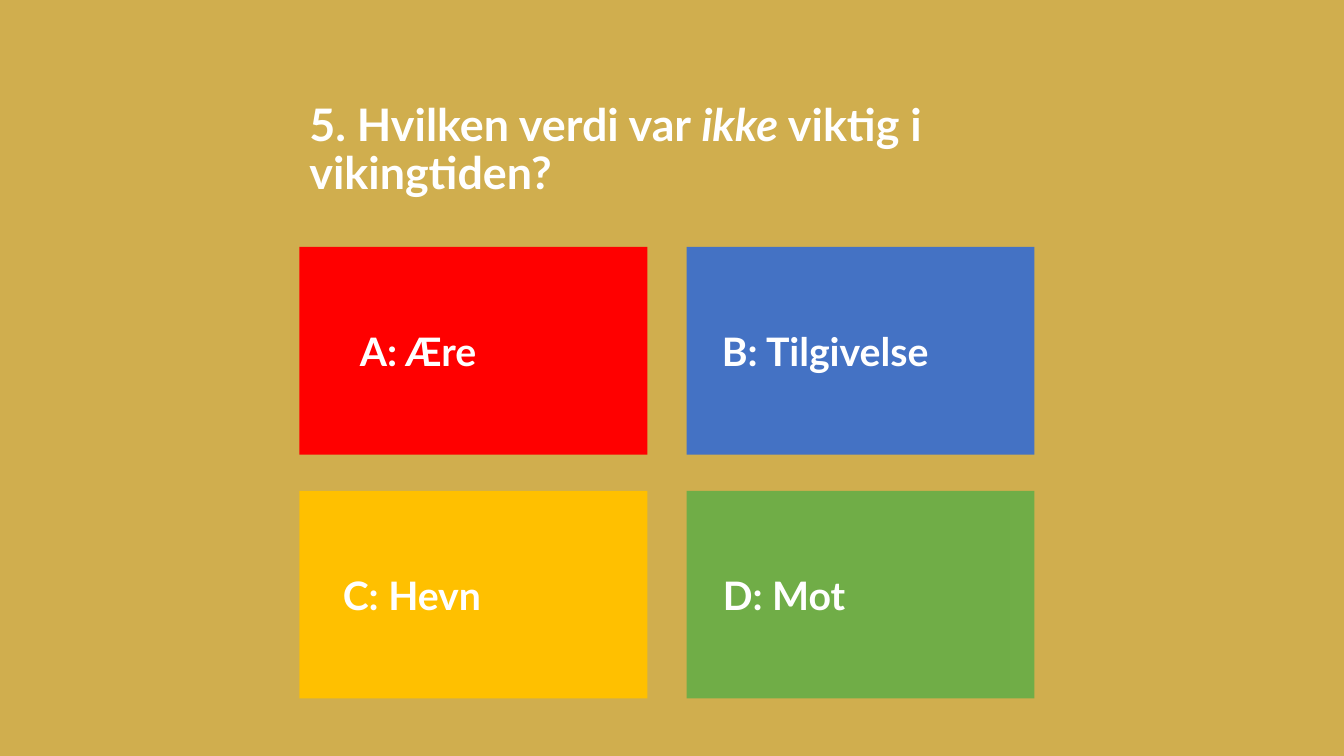
from pptx import Presentation, util as u
from pptx.dml.color import RGBColor
from pptx.enum import shapes, text

SAND = RGBColor(0xD0, 0xAE, 0x4E)
RED = RGBColor(0xFF, 0x00, 0x00)
BLUE = RGBColor(0x44, 0x72, 0xC4)
GOLD = RGBColor(0xFF, 0xC0, 0x00)
GREEN = RGBColor(0x70, 0xAD, 0x47)
WHITE = RGBColor(0xFF, 0xFF, 0xFF)

WIDE, HIGH = 13.33, 7.5
COLS = 2
GAP_X, GAP_Y = 0.39, 0.36

QUERY = [("5. Hvilken verdi var ", False), ("ikke", True),
         (" viktig i vikingtiden?", False)]
# Answer, tile colour, left inset
TILES = [("A: Ære", RED, 0.6), ("B: Tilgivelse", BLUE, 0.35),
         ("C: Hevn", GOLD, 0.43), ("D: Mot", GREEN, 0.36)]


def put(item, **attrs):
    for name, value in attrs.items():
        setattr(item, name, value)


def write(shape, runs, size, anchor, left=0.1, low=0.05):
    """Fill a shape with one left-aligned paragraph of (words, italic) runs."""
    frame = shape.text_frame
    put(frame, word_wrap=True, vertical_anchor=anchor,
        margin_left=u.Inches(left), margin_right=u.Inches(0.1),
        margin_top=u.Inches(0.05), margin_bottom=u.Inches(low))
    para = frame.paragraphs[0]
    para.alignment = text.PP_ALIGN.LEFT
    for words, slant in runs:
        run = para.add_run()
        run.text = words
        put(run.font, name="Lato", size=u.Pt(size), bold=True, italic=slant)
        run.font.color.rgb = WHITE
    return para


def question(slide, box):
    shape = slide.shapes.add_textbox(*map(u.Inches, box))
    para = write(shape, QUERY, 32, text.MSO_ANCHOR.BOTTOM, low=0.53)
    para.line_spacing = 0.9


def answers(slide, box):
    left, top, wide, high = box
    rows = len(TILES) // COLS
    cell_w = (wide - GAP_X * (COLS - 1)) / COLS
    cell_h = (high - GAP_Y * (rows - 1)) / rows
    for i, (words, hue, inset) in enumerate(TILES):
        row, col = divmod(i, COLS)
        spot = (left + col * (cell_w + GAP_X), top + row * (cell_h + GAP_Y),
                cell_w, cell_h)
        tile = slide.shapes.add_shape(shapes.MSO_SHAPE.RECTANGLE,
                                      *map(u.Inches, spot))
        tile.shadow.inherit = False
        tile.fill.solid()
        tile.fill.fore_color.rgb = hue
        tile.line.fill.background()
        write(tile, [(words, False)], 28, text.MSO_ANCHOR.MIDDLE, inset)


def main():
    deck = Presentation()
    put(deck, slide_width=u.Inches(WIDE), slide_height=u.Inches(HIGH))
    slide = deck.slides.add_slide(deck.slide_layouts[6])
    fill = slide.background.fill
    fill.solid()
    fill.fore_color.rgb = SAND
    left = 2.97
    question(slide, (left, 1.38, 8.69, 1.13))
    answers(slide, (left, 2.45, 7.29, 4.48))
    deck.save("out.pptx")


if __name__ == "__main__":
    main()
